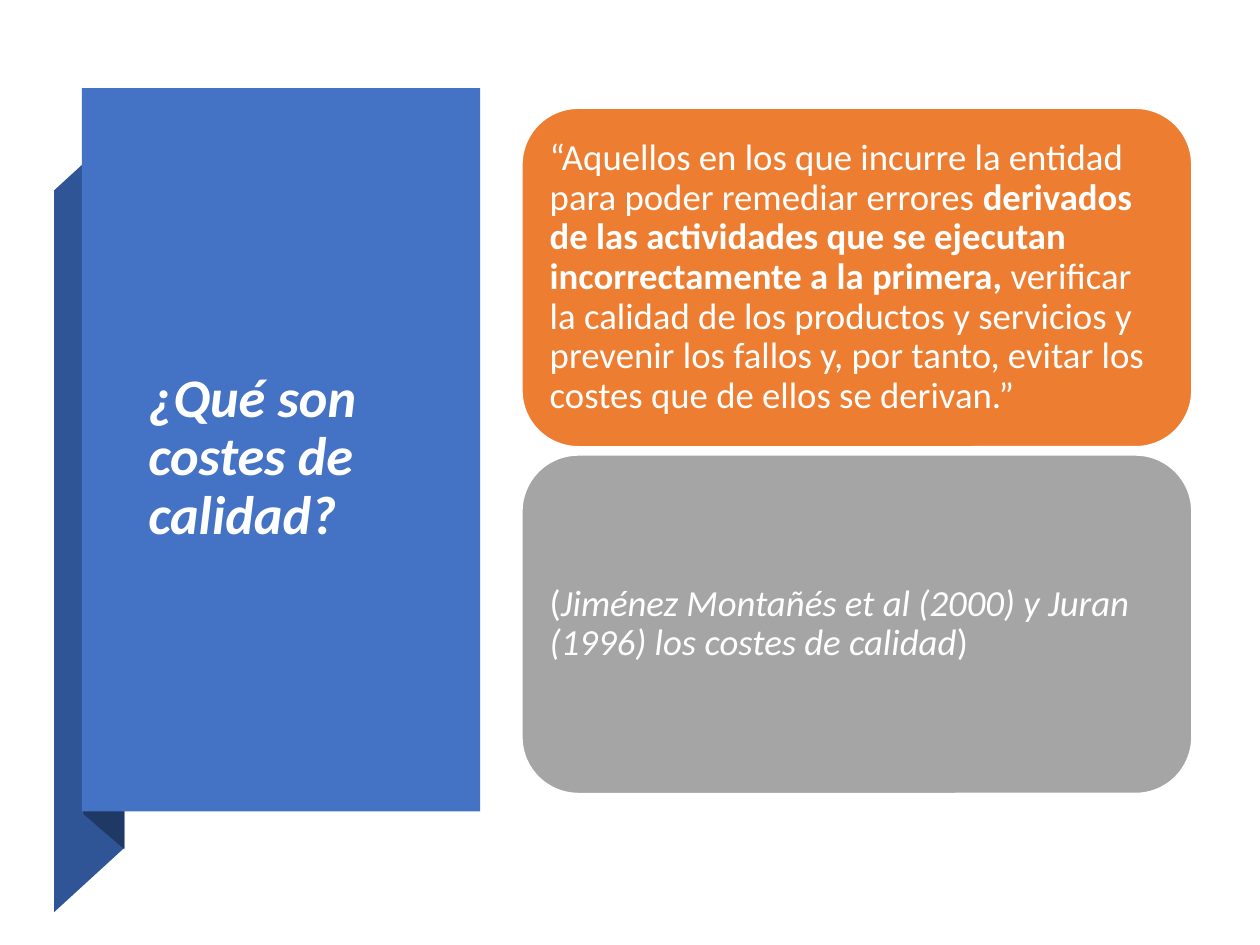
from pptx import Presentation
from pptx.dml.color import RGBColor
from pptx.enum.shapes import MSO_SHAPE
from pptx.enum.text import MSO_ANCHOR, PP_ALIGN
from pptx.util import Cm, Pt


def paint(shape, color):
    shape.shadow.inherit = False
    shape.fill.solid()
    shape.fill.fore_color.rgb = RGBColor.from_string(color)
    shape.line.fill.background()


def write(shape, runs, size, inset):
    frame = shape.text_frame
    frame.word_wrap = True
    frame.vertical_anchor = MSO_ANCHOR.MIDDLE
    frame.margin_left = frame.margin_right = Cm(inset)
    frame.margin_top = frame.margin_bottom = Cm(inset)
    paragraph = frame.paragraphs[0]
    paragraph.alignment = PP_ALIGN.LEFT
    paragraph.line_spacing = 0.9
    for text, bold, italic in runs:
        run = paragraph.add_run()
        run.text = text
        run.font.name = "Calibri"
        run.font.size = Pt(size)
        run.font.bold = bold
        run.font.italic = italic
        run.font.color.rgb = RGBColor.from_string("FFFFFF")


presentation = Presentation()
presentation.slide_width = Cm(25.4)
presentation.slide_height = Cm(19.05)
slide = presentation.slides.add_slide(presentation.slide_layouts[6])

ribbon_parts = [
    ("2F5597", [(1.09, 18.39), (2.51, 17.09), (2.51, 2.54), (1.09, 3.84)]),
    ("203864", [(1.68, 16.41), (2.51, 17.12), (2.51, 2.51), (1.68, 1.78)]),
]
for color, corners in ribbon_parts:
    points = [(Cm(x), Cm(y)) for x, y in corners]
    builder = slide.shapes.build_freeform(*points[0])
    builder.add_line_segments(points[1:], close=True)
    paint(builder.convert_to_shape(), color)

panel = slide.shapes.add_shape(MSO_SHAPE.RECTANGLE, Cm(1.65), Cm(1.78), Cm(8.03), Cm(14.58))
paint(panel, "4472C4")

title = slide.shapes.add_textbox(Cm(2.74), Cm(4.24), Cm(5.72), Cm(10))
write(title, [("¿Qué son costes de calidad?", True, True)], 31, 0.25)

cards = [
    ("ED7D31", [
        ("“Aquellos en los que incurre la entidad para poder remediar errores ", False, False),
        ("derivados de las actividades que se ejecutan incorrectamente a la primera, ", True, False),
        ("verificar la calidad de los productos y servicios y prevenir los fallos y, "
         "por tanto, evitar los costes que de ellos se derivan.”", False, False),
    ]),
    ("A5A5A5", [
        ("(", False, False),
        ("Jiménez Montañés et al (2000) y Juran (1996) los costes de calidad", False, True),
        (")", False, False),
    ]),
]
for index, (color, runs) in enumerate(cards):
    card = slide.shapes.add_shape(
        MSO_SHAPE.ROUNDED_RECTANGLE, Cm(10.52), Cm(2.18 + 6.99 * index), Cm(13.51), Cm(6.83))
    paint(card, color)
    card.line.color.rgb = RGBColor.from_string("FFFFFF")
    card.line.width = Pt(1)
    write(card, runs, 21, 0.23)

presentation.save("out.pptx")
